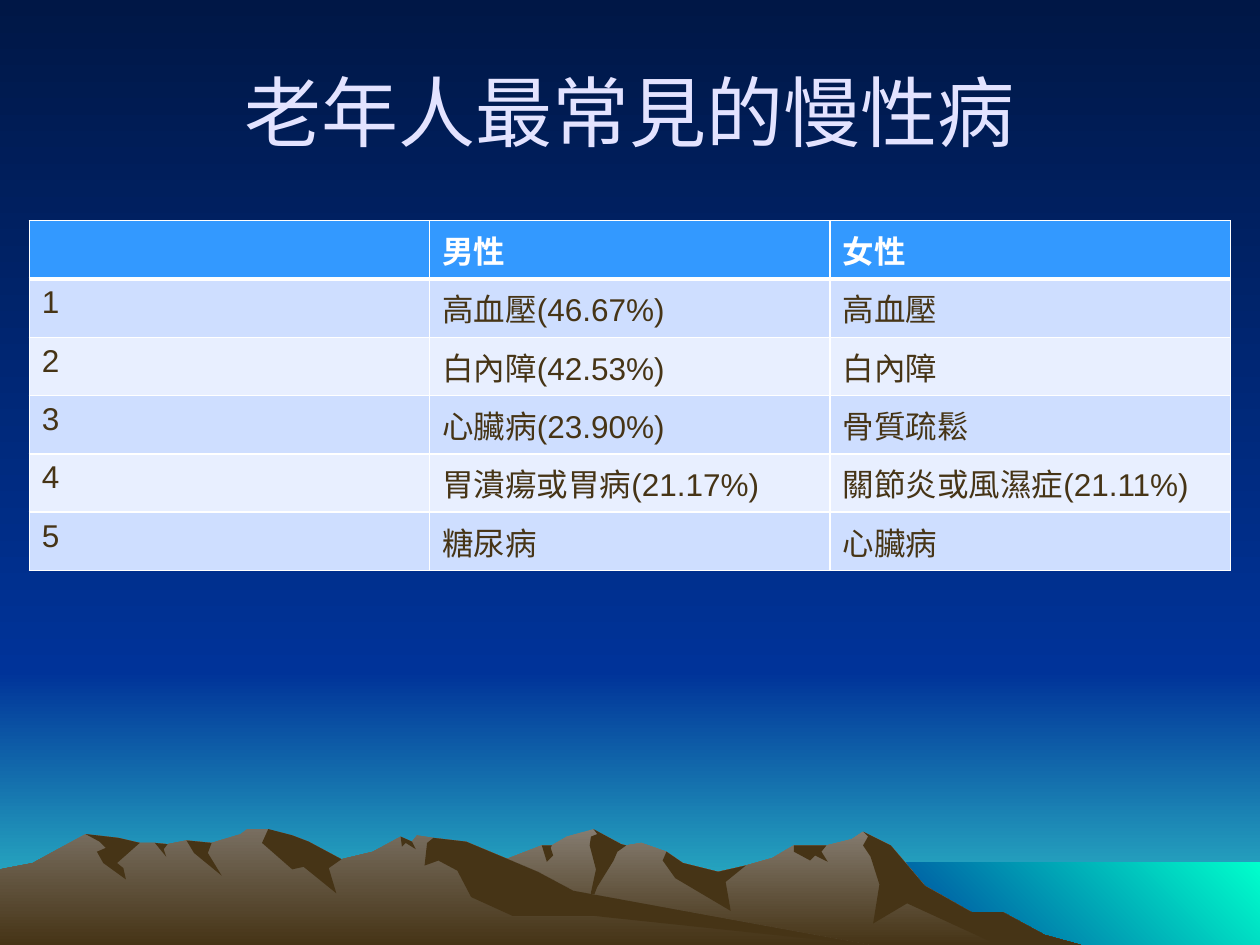
from lxml import etree
from pptx import Presentation
from pptx import util as u
from pptx.dml.color import RGBColor
from pptx.enum import shapes, text
from pptx.oxml.ns import qn

EARTH, WHITE, HEADER = "463416", "FFFFFF", "3399FF"
BANDS = ["CEDEFF", "E8EFFF"]
NIGHT, BLUE, HORIZON, SEA = "001746", "003399", "33CCCC", "00FFCC"
TITLE = "E3E3FF"
W, H = 25.4, 19.05
SKYLINE = 13.54
GRID = u.Cm(0.0254)  # mountain points are counted in 1000 steps across the slide
FLOOR = 750          # bottom edge of the slide in the same steps
DOWN, UP_RIGHT = 270, 45


def paint(fill, colors, angle=DOWN):
    """Fill with one colour, or with a two-colour gradient (angle counter-clockwise)."""
    if len(colors) == 1:
        fill.solid()
        fill.fore_color.rgb = RGBColor.from_string(colors[0])
        return
    fill.gradient()
    fill.gradient_angle = angle
    for stop, color in zip(fill.gradient_stops, colors):
        stop.color.rgb = RGBColor.from_string(color)


def set_font(p, size, color, bold=False):
    p.font.name, p.font.size, p.font.bold = "Arial", u.Pt(size), bold
    p.font.color.rgb = RGBColor.from_string(color)


prs = Presentation()
prs.slide_width, prs.slide_height = u.Cm(W), u.Cm(H)
s = prs.slides.add_slide(prs.slide_layouts[6])
paint(s.background.fill, [NIGHT, BLUE])

# Sky and sea: each area is given by its left, top, right and bottom edges
for left, top, right, bottom, colors, angle in [
    (0, SKYLINE, W, H, [BLUE, HORIZON], DOWN),
    (0, 0, W, SKYLINE, [NIGHT, BLUE], DOWN),
    (17.35, 17.39, W, H, [BLUE, SEA], UP_RIGHT),
]:
    sp = s.shapes.add_shape(shapes.MSO_SHAPE.RECTANGLE, u.Cm(left), u.Cm(top),
                            u.Cm(right - left), u.Cm(bottom - top))
    sp.shadow.inherit = False
    sp.line.fill.background()
    paint(sp.fill, colors, angle)

# Mountains: a range is its crest line, from left to right, closed along the floor.
# A shaded slope hangs from the crest between two x values; only its lower edge,
# from right to left, is listed.
far_range = {
    "light": "857C70",
    "crest": [(258, FLOOR), (277, 739), (327, 709), (355, 698), (394, 685), (430, 671),
              (438, 671), (450, 664), (471, 658), (493, 670), (497, 671), (509, 669),
              (529, 676), (542, 685), (570, 692), (592, 687), (613, 681), (630, 671),
              (656, 671), (676, 666), (685, 660), (707, 671), (734, 703), (771, 724),
              (796, 724), (829, 742), (858, FLOOR)],
    "slopes": {
        "east flank": (685, 858, [(792, 750), (720, 717), (693, 733), (698, 702),
                                  (691, 680), (685, 671), (689, 664)]),
        "central gully": (471, 497, [(490, 676), (487, 683), (474, 704), (465, 727),
                                     (473, 690), (468, 671), (469, 664), (474, 662)]),
        "saddle": (529, 592, [(576, 700), (580, 723), (536, 697), (526, 683)]),
        "notch": (630, 656, [(652, 676), (657, 684), (647, 679), (643, 683), (630, 676)]),
        "west nick": (430, 438, [(437, 673), (439, 679), (434, 684)]),
    },
}
near_range = {
    "light": "786E60",
    "crest": [(0, 690), (26, 685), (46, 674), (68, 662), (94, 665), (111, 669), (123, 669),
              (133, 670), (148, 667), (168, 669), (191, 662), (196, 658), (213, 658),
              (232, 663), (245, 668), (271, 682), (296, 676), (318, 664), (327, 668),
              (331, 663), (344, 665), (370, 668), (401, 681), (427, 692), (455, 707),
              (690, FLOOR)],
    "slopes": {
        "first peak": (68, 111, [(93, 685), (98, 689), (100, 698), (82, 685), (77, 676),
                                 (84, 673), (79, 668)]),
        "small nick": (123, 133, [(130, 674), (132, 680)]),
        "dip": (148, 168, [(165, 677), (176, 695), (154, 677)]),
        "second peak": (213, 271, [(261, 689), (267, 709), (241, 688), (232, 690),
                                   (208, 669)]),
        "tooth": (318, 327, [(330, 674), (322, 669), (319, 672)]),
        "long shadow": (344, 690, [(472, 727), (407, 727), (374, 712), (363, 691),
                                   (348, 683), (337, 687), (339, 669)]),
    },
}
for mountains in [far_range, near_range]:
    crest = mountains["crest"]
    first_x, last_x = crest[0][0], crest[-1][0]
    outlines = [(crest + [(last_x, FLOOR), (first_x, FLOOR)], [mountains["light"], EARTH])]
    for start, end, lower_edge in mountains["slopes"].values():
        upper_edge = [(x, y) for x, y in crest if start <= x <= end]
        outlines.append((upper_edge + lower_edge, [EARTH]))
    for points, colors in outlines:
        fb = s.shapes.build_freeform(*points[0], scale=GRID)
        fb.add_line_segments(points[1:], close=True)
        sp = fb.convert_to_shape()
        sp.shadow.inherit = False
        sp.line.fill.background()
        paint(sp.fill, colors)

# Title
tf = s.shapes.add_textbox(u.Cm(1.27), u.Cm(0.64), u.Cm(W - 2 * 1.27), u.Cm(3.18)).text_frame
tf.word_wrap = True
tf.vertical_anchor = text.MSO_ANCHOR.MIDDLE
p = tf.paragraphs[0]
p.text = "老年人最常見的慢性病"
p.alignment = text.PP_ALIGN.CENTER
set_font(p, 44, TITLE)

# Table: ranked diseases of men and women
men = ["高血壓(46.67%)", "白內障(42.53%)", "心臟病(23.90%)", "胃潰瘍或胃病(21.17%)", "糖尿病"]
women = ["高血壓", "白內障", "骨質疏鬆", "關節炎或風濕症(21.11%)", "心臟病"]
rows = [("", "男性", "女性")]
rows += [(str(rank), *pair) for rank, pair in enumerate(zip(men, women), 1)]
table = s.shapes.add_table(len(rows), 3, u.Cm(0.59), u.Cm(4.45),
                           u.Cm(W - 2 * 0.59), u.Cm(7.05)).table
for i, row in enumerate(rows):
    is_header = i == 0
    for j, value in enumerate(row):
        cell = table.cell(i, j)
        p = cell.text_frame.paragraphs[0]
        p.text = value
        set_font(p, 18, WHITE if is_header else EARTH, bold=is_header)
        tcPr = cell._tc.get_or_add_tcPr()
        for side in ["lnL", "lnR", "lnT", "lnB"]:
            under_header = (i, side) in [(0, "lnB"), (1, "lnT")]
            ln = etree.SubElement(tcPr, qn("a:" + side), w=str(u.Pt(3 if under_header else 1)))
            line_fill = etree.SubElement(ln, qn("a:solidFill"))
            etree.SubElement(line_fill, qn("a:srgbClr"), val=WHITE)
        paint(cell.fill, [HEADER if is_header else BANDS[(i - 1) % 2]])

prs.save("out.pptx")
